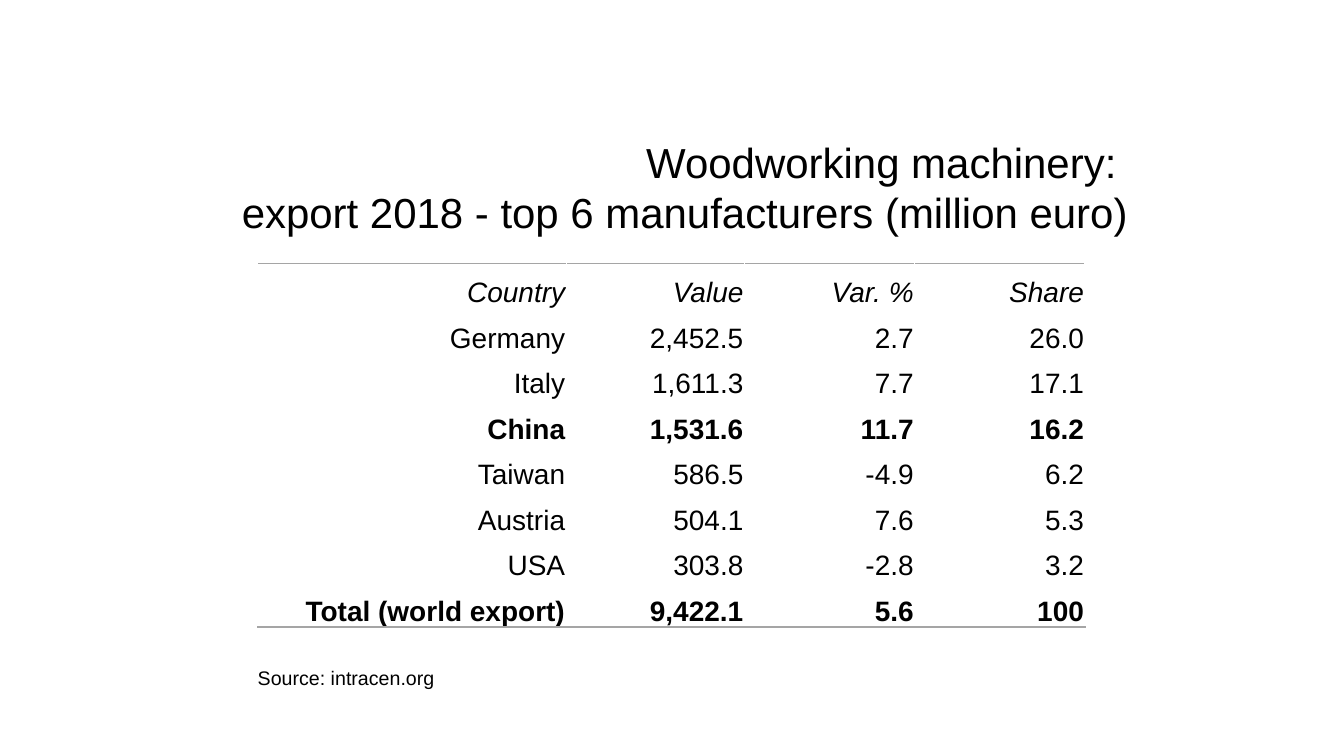
from lxml.etree import fromstring
from pptx import Presentation
from pptx.dml.color import RGBColor as RGB
from pptx.enum.text import MSO_ANCHOR as Anchor, MSO_AUTO_SIZE as Auto, PP_ALIGN as Align
from pptx.oxml.ns import nsdecls
from pptx.util import Pt

COLORS = {"text": "000000", "rule": "A5A5A5"}
FACE = "Arial"
HEAD = ["Woodworking machinery: ", "export 2018 - top 6 manufacturers (million euro)"]
ROWS = [
    ("Country", "Value", "Var. %", "Share"),
    ("Germany", "2,452.5", "2.7", "26.0"),
    ("Italy", "1,611.3", "7.7", "17.1"),
    ("China", "1,531.6", "11.7", "16.2"),
    ("Taiwan", "586.5", "-4.9", "6.2"),
    ("Austria", "504.1", "7.6", "5.3"),
    ("USA", "303.8", "-2.8", "3.2"),
    ("Total (world export)", "9,422.1", "5.6", "100"),
]
BOLD = {"China", "Total (world export)"}
WIDTHS = [220.3, 127.4, 121.7, 121.7]


def style(para, size, align=Align.RIGHT, bold=False, italic=False):
    para.alignment = align
    font = para.font
    font.name, font.size = FACE, Pt(size)
    font.bold, font.italic = bold, italic
    font.color.rgb = RGB.from_string(COLORS["text"])


def rule(cell, side):
    """Draw a thin line on one side of a cell: T or B."""
    line = fromstring(
        f'<a:ln{side} {nsdecls("a")} w="{Pt(1)}"><a:solidFill>'
        f'<a:srgbClr val="{COLORS["rule"]}"/></a:solidFill></a:ln{side}>')
    cell._tc.get_or_add_tcPr().insert(0, line)


def add_title(slide, x, y, w, h):
    title = slide.shapes.title
    title.left, title.top, title.width, title.height = Pt(x), Pt(y), Pt(w), Pt(h)
    frame = title.text_frame
    frame.auto_size, frame.word_wrap = Auto.NONE, True
    frame.vertical_anchor = Anchor.TOP
    frame.text = "\n".join(HEAD)
    for para in frame.paragraphs:
        style(para, 30)


def add_grid(slide, x, y, w, h):
    shape = slide.shapes.add_table(len(ROWS), len(WIDTHS), Pt(x), Pt(y), Pt(w), Pt(h))
    table = shape.table
    table.first_row = table.horz_banding = False
    for col, width in zip(table.columns, WIDTHS):
        col.width = Pt(width)
    last = len(ROWS) - 1
    for i, row in enumerate(ROWS):
        table.rows[i].height = Pt(h / len(ROWS))
        for j, text in enumerate(row):
            cell = table.cell(i, j)
            cell.text = text
            cell.vertical_anchor = Anchor.BOTTOM
            cell.margin_left = cell.margin_right = cell.margin_top = Pt(0.7)
            cell.margin_bottom = 0
            cell.fill.background()
            style(cell.text_frame.paragraphs[0], 20, bold=row[0] in BOLD, italic=i == 0)
            if i in (0, last):
                rule(cell, "B" if i else "T")


def add_source(slide, x, y, w, h):
    frame = slide.shapes.add_textbox(Pt(x), Pt(y), Pt(w), Pt(h)).text_frame
    frame.word_wrap = True
    frame.text = "Source: intracen.org"
    style(frame.paragraphs[0], 14, Align.LEFT)


def main():
    deck = Presentation()
    deck.slide_width, deck.slide_height = Pt(960.5), Pt(540)
    slide = deck.slides.add_slide(deck.slide_layouts[5])
    add_title(slide, 162.7, 93.6, 650.9, 80)
    add_grid(slide, 184.3, 188, sum(WIDTHS), 260)
    add_source(slide, 177.1, 472.3, 155.5, 24.5)
    deck.save("out.pptx")


if __name__ == "__main__":
    main()
